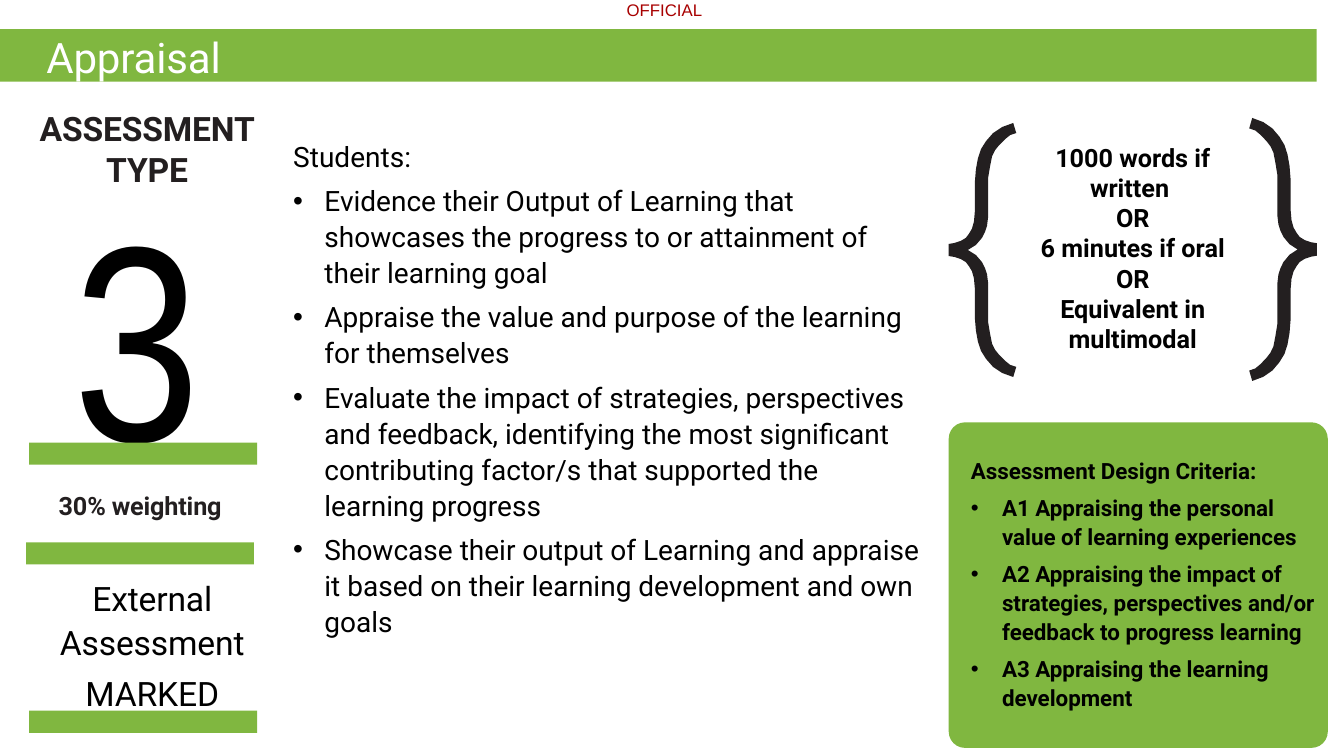
from pptx import Presentation
from pptx.dml.color import RGBColor as RGB
from pptx.enum.shapes import MSO_SHAPE as Shape
from pptx.enum.text import MSO_ANCHOR as Anchor, MSO_AUTO_SIZE as Fit, PP_ALIGN as Align
from pptx.oxml.ns import qn
from pptx.util import Inches, Pt
from lxml import etree

COLOURS = {"green": "80B740", "ink": "231F20", "black": "000000", "white": "FFFFFF", "red": "A80000"}
CELL = 0.1
BRACE_SIZE = (67, 252)
BRACE_HALF = [
    (0, 120), (6, 119), (12, 117), (17, 114), (20, 110), (23, 105), (25, 98), (26, 87),
    (26, 58), (27, 46), (29, 35), (32, 26), (37, 18), (44, 10), (53, 4), (64, 0),
    (67, 10), (61, 12), (56, 16), (50, 22), (46, 27), (43, 33), (41, 43), (39, 55),
    (39, 86), (39, 94), (38, 102), (36, 108), (33, 114), (27, 121), (19, 126),
]


class AppraisalSlide:
    """Draws styled elements on a slide, with lengths in tenth-of-an-inch columns and rows."""

    def __init__(self, prs):
        self.s = prs.slides.add_slide(prs.slide_layouts[5])

    def box(self, *cells):
        return [Inches(cell * CELL) for cell in cells]

    def paint(self, sp, colour):
        sp.fill.solid()
        sp.fill.fore_color.rgb = RGB.from_string(COLOURS[colour])

    def finish(self, sp, colour):
        self.paint(sp, colour)
        sp.line.fill.background()
        sp.shadow.inherit = False

    def fill_text(self, tf, lines, size, colour="black", font="Roboto", bold=False, align=Align.LEFT,
                  before=0, spacing=1.0, track=0, margins=(0.1, 0.05, 0.1, 0.05), bullets=False):
        left, top, right, bottom = map(Inches, margins)
        frame = {"word_wrap": True, "auto_size": Fit.NONE, "vertical_anchor": Anchor.TOP,
                 "margin_left": left, "margin_top": top, "margin_right": right, "margin_bottom": bottom}
        for name, value in frame.items():
            setattr(tf, name, value)
        para = {"alignment": align, "space_before": Pt(before), "line_spacing": spacing}
        style = {"name": font, "size": Pt(size), "bold": bold}
        for i, line in enumerate(lines):
            p = tf.paragraphs[0] if i == 0 else tf.add_paragraph()
            for name, value in para.items():
                setattr(p, name, value)
            r = p.add_run()
            r.text = line
            for name, value in style.items():
                setattr(r.font, name, value)
            r.font.color.rgb = RGB.from_string(COLOURS[colour])
            if track:
                r.font._element.set("spc", str(track))
            if bullets and i:
                self.bullet(p)

    def bullet(self, p):
        pPr = p._p.get_or_add_pPr()
        pPr.set("marL", str(Inches(0.31)))
        pPr.set("indent", str(-Inches(0.31)))
        etree.SubElement(pPr, qn("a:buFont")).set("typeface", "Arial")
        etree.SubElement(pPr, qn("a:buChar")).set("char", "•")

    def title(self, cells, text, **fmt):
        sp = self.s.shapes.title
        sp.left, sp.top, sp.width, sp.height = self.box(*cells)
        self.paint(sp, "green")
        self.fill_text(sp.text_frame, [text], **fmt)

    def text(self, cells, lines, **fmt):
        self.fill_text(self.s.shapes.add_textbox(*self.box(*cells)).text_frame, lines, **fmt)

    def bar(self, col, row):
        self.finish(self.s.shapes.add_shape(Shape.RECTANGLE, *self.box(col, row, 22.6, 2.2)), "green")

    def panel(self, cells):
        sp = self.s.shapes.add_shape(Shape.ROUNDED_RECTANGLE, *self.box(*cells))
        sp.adjustments[0] = 0.05
        self.finish(sp, "green")

    def brace(self, cells, flip=False):
        left, top, width, height = self.box(*cells)
        w, h = BRACE_SIZE
        outline = BRACE_HALF + [(x, h - y) for x, y in reversed(BRACE_HALF[:-1])]
        points = [(left + width * (w - x if flip else x) / w, top + height * y / h) for x, y in outline]
        builder = self.s.shapes.build_freeform(*points[0], scale=1.0)
        builder.add_line_segments(points[1:], close=True)
        self.finish(builder.convert_to_shape(), "ink")


def main():
    prs = Presentation()
    prs.slide_width, prs.slide_height = Inches(13.33), Inches(7.5)
    slide = AppraisalSlide(prs)
    flush = (0, 0.01, 0, 0)
    label = {"colour": "ink", "bold": True, "align": Align.CENTER, "before": 0.7, "track": -10, "margins": flush}
    prose = {"before": 6, "spacing": 1.07}

    slide.title((0, 2.9, 130.6, 5.2), "Appraisal", size=30, colour="white", before=1.4,
                track=-10, margins=(0.46, 0.02, 0, 0))
    slide.text((61.9, 0, 8, 2), ["OFFICIAL"], size=12, colour="red", font="Arial",
               align=Align.CENTER, margins=(0, 0, 0, 0))

    slide.text((2.2, 15.7, 22.8, 34.5), ["3"], size=199, font="Arial Narrow", align=Align.CENTER)
    slide.text((3.4, 10.6, 22.4, 8.3), ["ASSESSMENT", "TYPE"], size=24, **label)
    for col, row in [(2.9, 43.9), (2.6, 53.8), (2.9, 70.5)]:
        slide.bar(col, row)
    slide.text((2.3, 48.5, 23.2, 3.1), ["30% weighting"], size=18, **label)
    slide.text((2.3, 56.6, 25.6, 14.6), ["External Assessment", "MARKED"], size=24,
               align=Align.CENTER, track=-10, **prose)

    slide.text((28.1, 13.1, 64.6, 51), [
        "Students:",
        "Evidence their Output of Learning that showcases the progress to or attainment of their learning goal",
        "Appraise the value and purpose of the learning for themselves",
        "Evaluate the impact of strategies, perspectives and feedback, identifying the most significant "
        "contributing factor/s that supported the learning progress",
        "Showcase their output of Learning and appraise it based on their learning development and own goals",
    ], size=20, bullets=True, **prose)

    slide.brace((94.1, 12.2, 6.7, 25.2))
    slide.brace((123.9, 11.7, 6.7, 26.1), flip=True)
    slide.text((100.8, 13.6, 23.1, 25.2), [
        "1000 words if written ", "OR", "6 minutes if oral", "OR", "Equivalent in multimodal",
    ], size=18, bold=True, align=Align.CENTER)

    slide.panel((94.1, 41.9, 37.6, 32.3))
    slide.text((95.3, 44.7, 37.1, 26.4), [
        "Assessment Design Criteria:",
        "A1 Appraising the personal value of learning experiences",
        "A2 Appraising the impact of strategies, perspectives and/or feedback to progress learning",
        "A3 Appraising the learning development",
    ], size=16, bold=True, bullets=True, **prose)
    prs.save("out.pptx")


if __name__ == "__main__":
    main()
